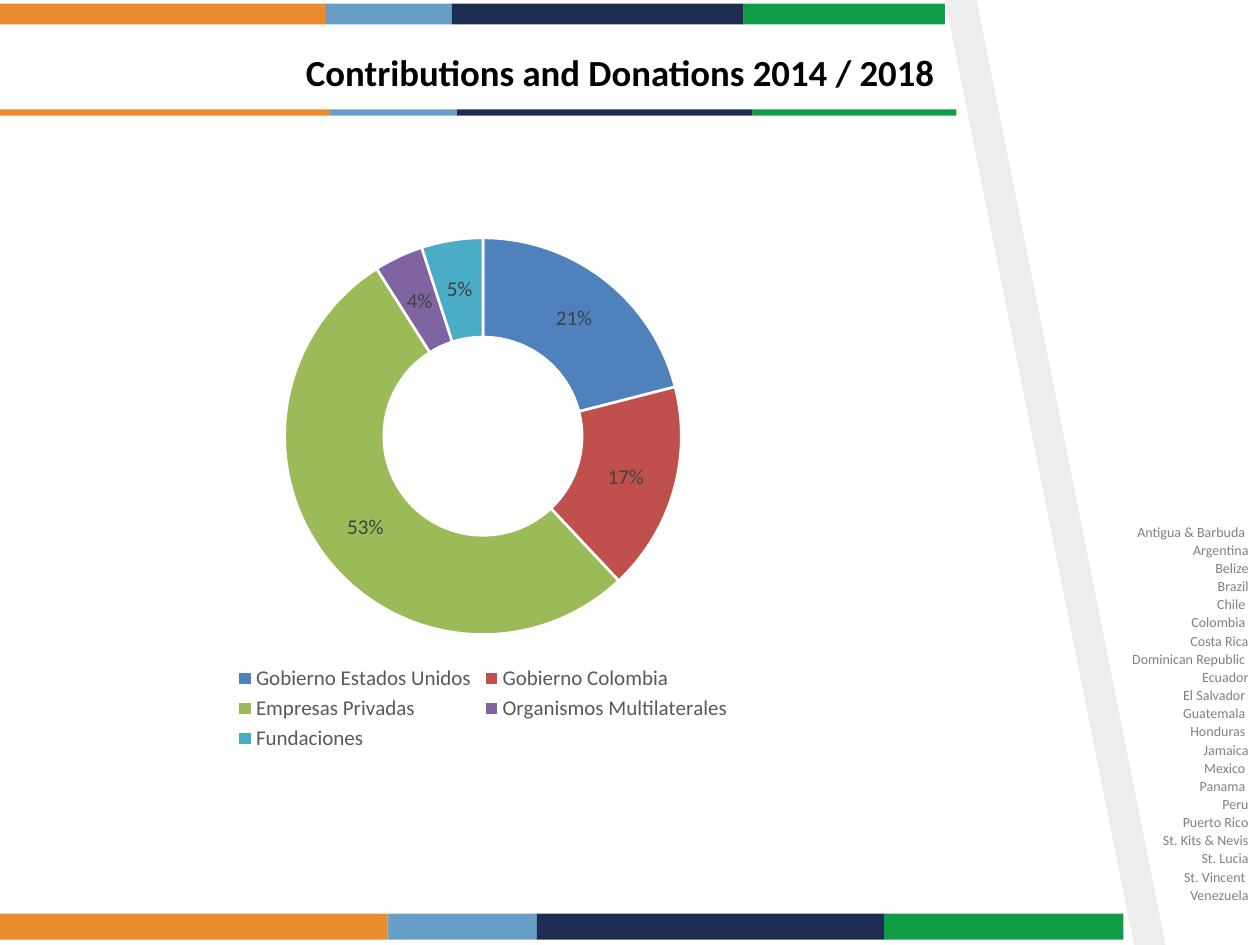
from pptx import Presentation
from pptx.chart.data import CategoryChartData
from pptx.dml.color import RGBColor
from pptx.enum.chart import XL_CHART_TYPE, XL_LEGEND_POSITION
from pptx.enum.shapes import MSO_SHAPE
from pptx.enum.text import PP_ALIGN
from pptx.util import Pt

DOUGHNUT = XL_CHART_TYPE.DOUGHNUT
BOTTOM = XL_LEGEND_POSITION.BOTTOM
RECTANGLE = MSO_SHAPE.RECTANGLE
RIGHT = PP_ALIGN.RIGHT

BLACK = RGBColor(0x00, 0x00, 0x00)
WHITE = RGBColor(0xFF, 0xFF, 0xFF)
BAND_GRAY = RGBColor(0xED, 0xED, 0xED)
COUNTRY_GRAY = RGBColor(0x80, 0x80, 0x80)
LABEL_GRAY = RGBColor(0x40, 0x40, 0x40)
LEGEND_GRAY = RGBColor(0x59, 0x59, 0x59)
ORANGE = RGBColor(0xEB, 0x8B, 0x2F)
SKY = RGBColor(0x68, 0x9F, 0xC9)
NAVY = RGBColor(0x1E, 0x2E, 0x53)
GREEN = RGBColor(0x0E, 0x9F, 0x46)

FONT = "Calibri"
STRIPE_SHARES = [(ORANGE, 0.345), (SKY, 0.133), (NAVY, 0.309), (GREEN, 0.213)]
DONORS = [
    ("Gobierno Estados Unidos", 21, RGBColor(0x4F, 0x81, 0xBD)),
    ("Gobierno Colombia", 17, RGBColor(0xC0, 0x50, 0x4D)),
    ("Empresas Privadas", 53, RGBColor(0x9B, 0xBB, 0x59)),
    ("Organismos Multilaterales", 4, RGBColor(0x80, 0x64, 0xA2)),
    ("Fundaciones", 5, RGBColor(0x4B, 0xAC, 0xC6)),
]
COUNTRIES = [
    "Antigua & Barbuda ", "Argentina", "Belize", "Brazil", "Chile ",
    "Colombia ", "Costa Rica", "Dominican Republic ", "Ecuador",
    "El Salvador ", "Guatemala ", "Honduras ", "Jamaica", "Mexico ",
    "Panama ", "Peru", "Puerto Rico", "St. Kits & Nevis", "St. Lucia",
    "St. Vincent ", "Venezuela",
]


def set_font(font, size, color, bold=False):
    font.name = FONT
    font.size = Pt(size)
    font.bold = bold
    font.color.rgb = color


def fill_flat(shape, color):
    shape.shadow.inherit = False
    shape.fill.solid()
    shape.fill.fore_color.rgb = color
    shape.line.fill.background()


def add_slanted_band(s, top_left, bottom_left, width, height):
    builder = s.shapes.build_freeform(Pt(top_left), 0)
    builder.add_line_segments([
        (Pt(top_left + width), 0),
        (Pt(bottom_left + width), Pt(height)),
        (Pt(bottom_left), Pt(height)),
    ])
    fill_flat(builder.convert_to_shape(), BAND_GRAY)


def add_stripe(s, left, top, width, height):
    """Four-colour bar whose parts keep the same shares at any width."""
    for color, share in STRIPE_SHARES:
        part = s.shapes.add_shape(RECTANGLE, Pt(left), Pt(top),
                                  Pt(width * share), Pt(height))
        fill_flat(part, color)
        left += width * share


def add_right_text(s, left, top, width, height, lines, size, color,
                   bold=False, gap=0):
    tf = s.shapes.add_textbox(Pt(left), Pt(top), Pt(width), Pt(height)).text_frame
    tf.word_wrap = True
    tf.margin_left = tf.margin_right = tf.margin_bottom = 0
    tf.margin_top = Pt(1)
    for i, line in enumerate(lines):
        p = tf.add_paragraph() if i else tf.paragraphs[0]
        p.text = line
        p.alignment = RIGHT
        if i:
            p.space_before = Pt(gap)
        set_font(p.font, size, color, bold)


def add_donor_chart(s, left, top, width, height):
    data = CategoryChartData()
    data.categories = [name for name, _, _ in DONORS]
    data.add_series("Series 1", [value for _, value, _ in DONORS])
    chart = s.shapes.add_chart(DOUGHNUT, Pt(left), Pt(top), Pt(width),
                               Pt(height), data).chart
    chart.has_title = False
    set_font(chart.font, 10, BLACK)
    chart.has_legend = True
    chart.legend.position = BOTTOM
    chart.legend.include_in_layout = False
    set_font(chart.legend.font, 12, LEGEND_GRAY)

    plot = chart.plots[0]
    plot.vary_by_categories = True
    hole = plot._element.find("{*}holeSize")
    hole.set("val", "75")
    for i, (_, _, color) in enumerate(DONORS):
        fmt = plot.series[0].points[i].format
        fmt.fill.solid()
        fmt.fill.fore_color.rgb = color
        fmt.line.color.rgb = WHITE
        fmt.line.width = Pt(1.5)
    labels = plot.series[0].data_labels
    labels.show_percentage = True
    labels.show_value = False
    labels.number_format = "0%"
    labels.number_format_is_linked = False
    set_font(labels.font, 12, LABEL_GRAY)


def main():
    prs = Presentation()
    prs.slide_width, prs.slide_height = Pt(720), Pt(540)
    s = prs.slides.add_slide(prs.slide_layouts[6])
    add_slanted_band(s, 540, 648, 18, 540)
    add_stripe(s, 0, 2, 540, 12)
    add_stripe(s, 0, 522, 642, 15)
    add_stripe(s, 0, 62.5, 546.5, 3.6)
    add_right_text(s, 636, 298, 77.5, 224, COUNTRIES, 8, COUNTRY_GRAY, gap=0.8)
    add_right_text(s, 102, 27.5, 432, 26,
                   ["Contributions and Donations 2014 / 2018"], 21, BLACK, bold=True)
    add_donor_chart(s, 54, 126, 444, 306)
    prs.save("out.pptx")


if __name__ == "__main__":
    main()
